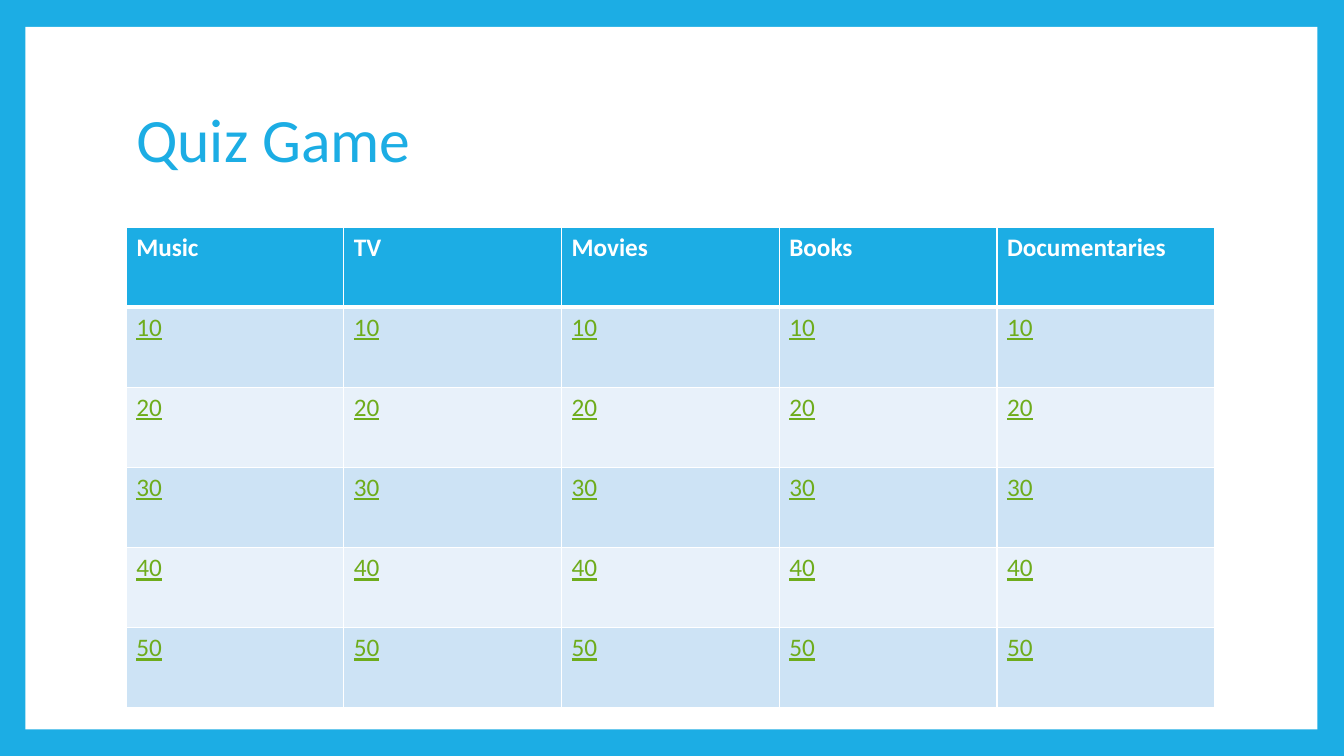
"""Build a quiz board slide with a title and a table of points by category."""
from lxml import etree
from pptx import Presentation
from pptx.dml.color import RGBColor
from pptx.enum import shapes, text
from pptx.oxml import ns
from pptx.util import Cm, Pt

TITLE = "Quiz Game"
CATEGORIES = ["Music", "TV", "Movies", "Books", "Documentaries"]
POINTS = ["10", "20", "30", "40", "50"]
ROWS = [CATEGORIES] + [[points] * len(CATEGORIES) for points in POINTS]

FONT = "Calibri"
BLUE, WHITE, GREEN = "1CADE4", "FFFFFF", "6EAC1C"
BANDS = ["E8F1FA", "CDE3F5"]
SLIDE_W, SLIDE_H = 33.87, 19.05
PANEL = (0.64, 0.68, 32.56, 17.7)
LEFT, WIDTH = 3.18, 27.43
TITLE_TOP, TITLE_H = 1.7, 3.76
TABLE_TOP, ROW_H = 5.72, 2.02


def rgb(value):
    return RGBColor.from_string(value)


def paint(fill, color):
    fill.solid()
    fill.fore_color.rgb = rgb(color)


def write(tf, words, size, color, bold=False, underline=False):
    p = tf.paragraphs[0]
    r = p.add_run()
    r.text = words
    r.font.name, r.font.size = FONT, Pt(size)
    r.font.bold, r.font.underline = bold, underline
    r.font.color.rgb = rgb(color)
    return p


def border(cell, side, points):
    tcPr = cell._tc.get_or_add_tcPr()
    ln = etree.SubElement(tcPr, ns.qn("a:ln" + side), w=str(Pt(points)))
    fill = etree.SubElement(ln, ns.qn("a:solidFill"))
    etree.SubElement(fill, ns.qn("a:srgbClr"), val=WHITE)


def add_panel(s):
    sp = s.shapes.add_shape(shapes.MSO_SHAPE.RECTANGLE, *map(Cm, PANEL))
    sp.shadow.inherit = False
    paint(sp.fill, WHITE)
    sp.line.fill.background()
    s.shapes.title._element.addprevious(sp._element)


def add_title(s):
    sp = s.shapes.title
    sp.left, sp.top = Cm(LEFT), Cm(TITLE_TOP)
    sp.width, sp.height = Cm(WIDTH), Cm(TITLE_H)
    tf = sp.text_frame
    tf.word_wrap = True
    tf.vertical_anchor = text.MSO_ANCHOR.MIDDLE
    p = write(tf, TITLE, 44, BLUE)
    p.alignment = text.PP_ALIGN.LEFT
    p.line_spacing = 0.9


def add_board(s):
    frame = s.shapes.add_table(len(ROWS), len(CATEGORIES), Cm(LEFT), Cm(TABLE_TOP),
                               Cm(WIDTH), Cm(ROW_H * len(ROWS)))
    table = frame.table
    for column in table.columns:
        column.width = Cm(WIDTH / len(CATEGORIES))
    for i, row in enumerate(ROWS):
        table.rows[i].height = Cm(ROW_H)
        header = i == 0
        edges = {"L": 1, "R": 1, "T": 3 if i == 1 else 1, "B": 3 if header else 1}
        for j, words in enumerate(row):
            cell = table.cell(i, j)
            for side, points in edges.items():
                border(cell, side, points)
            paint(cell.fill, BLUE if header else BANDS[i % 2])
            write(cell.text_frame, words, 18, WHITE if header else GREEN,
                  bold=header, underline=not header)


def main():
    prs = Presentation()
    prs.slide_width, prs.slide_height = Cm(SLIDE_W), Cm(SLIDE_H)
    s = prs.slides.add_slide(prs.slide_layouts[5])
    paint(s.background.fill, BLUE)
    add_panel(s)
    add_title(s)
    add_board(s)
    prs.save("out.pptx")


if __name__ == "__main__":
    main()
